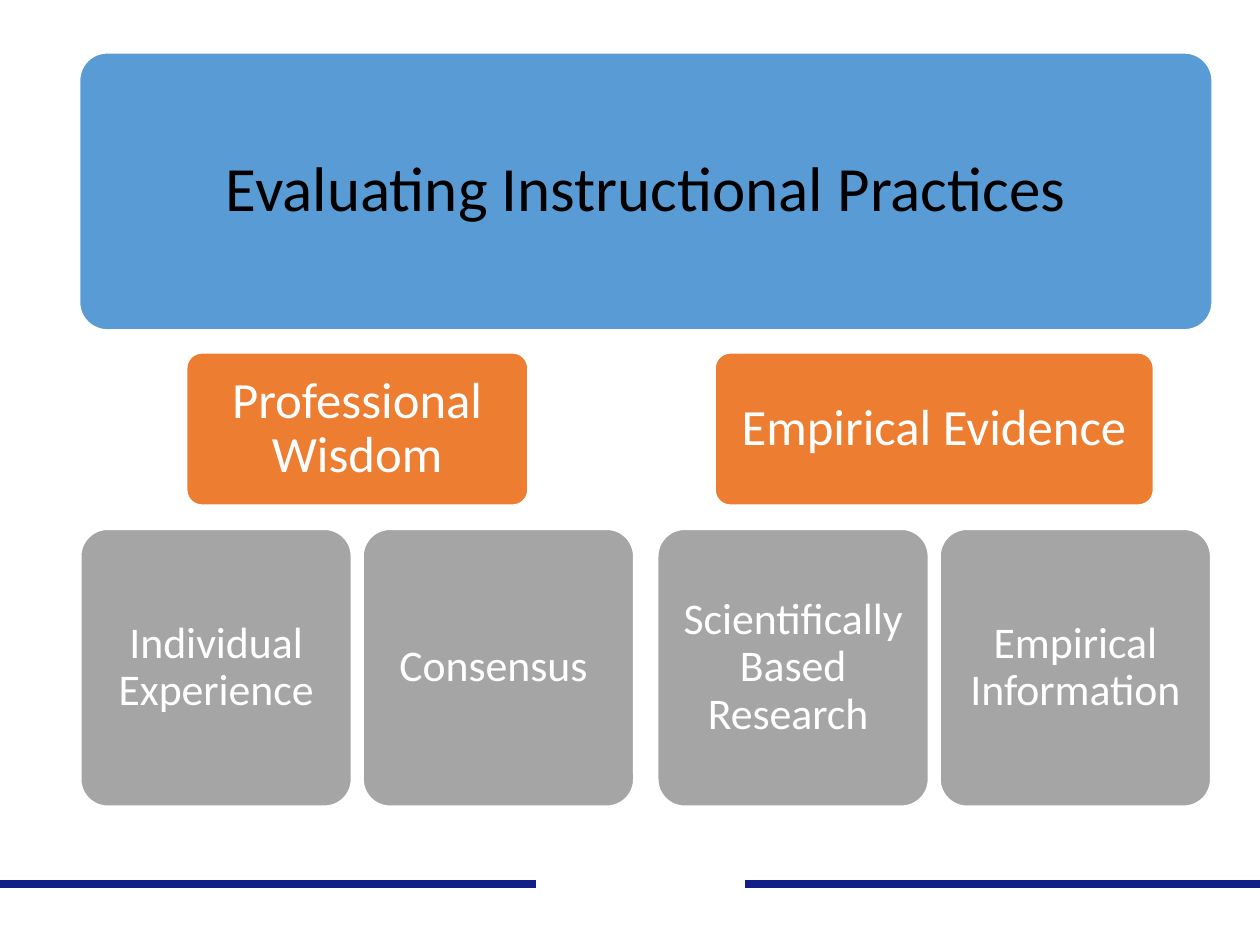
from pptx import Presentation
from pptx.dml.color import RGBColor
from pptx.enum.shapes import MSO_CONNECTOR, MSO_SHAPE
from pptx.enum.text import MSO_ANCHOR, PP_ALIGN
from pptx.oxml.ns import qn
from pptx.util import Pt
from lxml import etree

WHITE, BLACK, NAVY = "FFFFFF", "000000", "121F88"
BLUE, ORANGE, GRAY = "599BD5", "ED7D31", "A5A5A5"

LEAF_WIDTH, LEAF_STEP = 154.8, 161.3
TALL, SHORT = 158.4, 87.1
TITLE_TOP, BRANCH_TOP, LEAF_TOP = 30.2, 201.6, 302.4
RULE_Y = 505.4

# Branch name, branch width, left edge of its leaves, leaf names
BRANCHES = [
    ("Professional Wisdom", 195.1, 46.1,
     ["Individual Experience", "Consensus "]),
    ("Empirical Evidence", 250.6, 375.8,
     ["Scientifically Based Research ", "Empirical Information"]),
]


def color(hex_string):
    return RGBColor.from_string(hex_string)


def add_card(slide, label, left, top, width, height, fill, size, inset,
             text_color=WHITE):
    card = slide.shapes.add_shape(MSO_SHAPE.ROUNDED_RECTANGLE, Pt(left),
                                  Pt(top), Pt(width), Pt(height))
    card.adjustments[0] = 0.1
    card.shadow.inherit = False
    card.fill.solid()
    card.fill.fore_color.rgb = color(fill)
    card.line.color.rgb = color(WHITE)
    card.line.width = Pt(1)

    frame = card.text_frame
    frame.word_wrap = True
    frame.vertical_anchor = MSO_ANCHOR.MIDDLE
    frame.margin_left = frame.margin_right = Pt(inset)
    frame.margin_top = frame.margin_bottom = Pt(inset)
    paragraph = frame.paragraphs[0]
    paragraph.alignment = PP_ALIGN.CENTER
    paragraph.line_spacing = 0.9
    run = paragraph.add_run()
    run.text = label
    run.font.name = "Calibri"
    run.font.size = Pt(size)
    run.font.color.rgb = color(text_color)


def add_rule(slide, start, end, line_color):
    rule = slide.shapes.add_connector(MSO_CONNECTOR.STRAIGHT, Pt(start),
                                      Pt(RULE_Y), Pt(end), Pt(RULE_Y))
    rule.line.color.rgb = color(line_color)
    rule.line.width = Pt(4.5)
    etree.SubElement(rule._element.spPr, qn("a:effectLst"))


def main():
    deck = Presentation()
    deck.slide_width, deck.slide_height = Pt(720), Pt(540)
    slide = deck.slides.add_slide(deck.slide_layouts[6])

    # Footer rule with a gap in the middle
    add_rule(slide, 0, 720, NAVY)
    add_rule(slide, 306, 425.5, WHITE)

    # Top of the hierarchy
    add_card(slide, "Evaluating Instructional Practices", 45.4, TITLE_TOP,
             647.3, TALL, BLUE, 36, 10.8, BLACK)

    # Each branch is centred above its leaves
    for branch, branch_width, left, leaves in BRANCHES:
        leaves_width = LEAF_STEP * (len(leaves) - 1) + LEAF_WIDTH
        branch_left = left + (leaves_width - branch_width) / 2
        add_card(slide, branch, branch_left, BRANCH_TOP, branch_width, SHORT,
                 ORANGE, 29, 8.7)
        for index, leaf in enumerate(leaves):
            add_card(slide, leaf, left + index * LEAF_STEP, LEAF_TOP,
                     LEAF_WIDTH, TALL, GRAY, 25, 7.5)

    deck.save("out.pptx")


if __name__ == "__main__":
    main()
